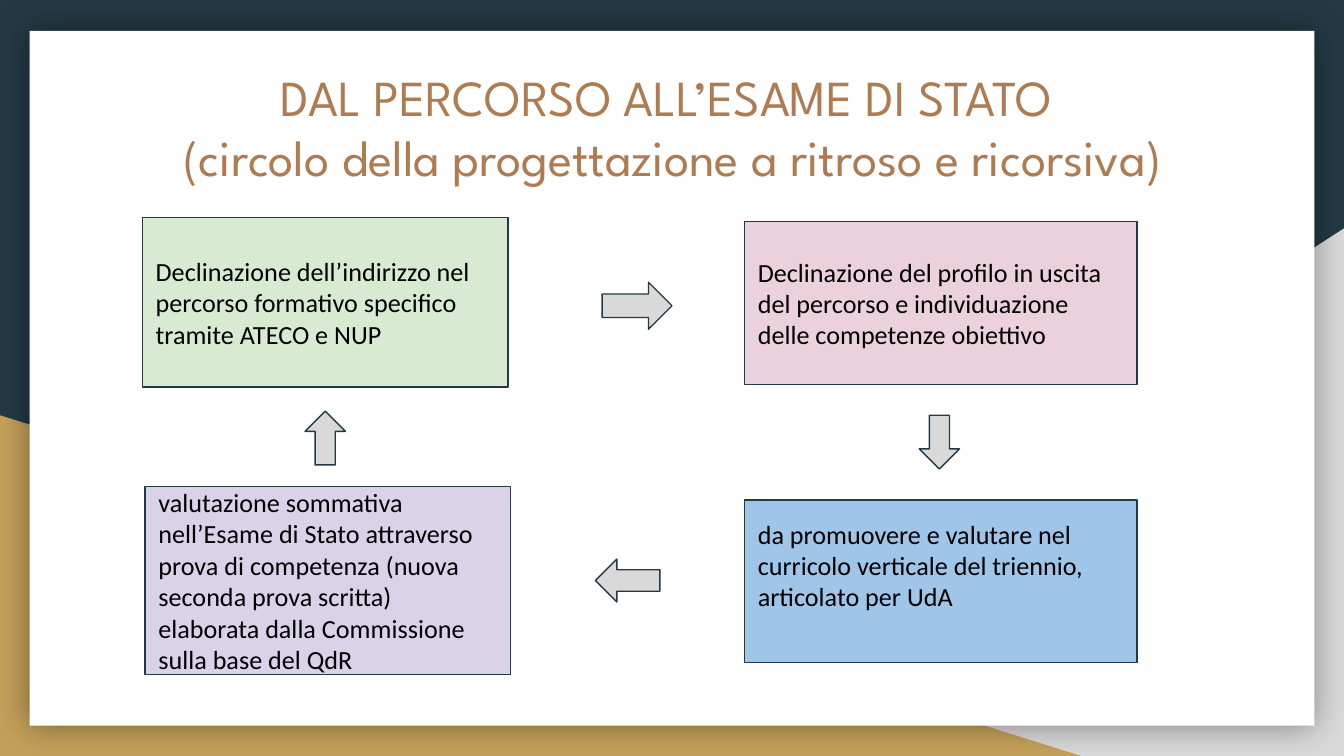
from lxml import etree
from pptx import Presentation
from pptx.dml.color import RGBColor
from pptx.enum.shapes import MSO_SHAPE
from pptx.enum.text import MSO_ANCHOR, MSO_AUTO_SIZE, PP_ALIGN
from pptx.oxml.ns import qn
from pptx.util import Inches, Pt

RECTANGLE = MSO_SHAPE.RECTANGLE
TRIANGLE = MSO_SHAPE.RIGHT_TRIANGLE
TOP, MIDDLE = MSO_ANCHOR.TOP, MSO_ANCHOR.MIDDLE
LEFT, CENTER = PP_ALIGN.LEFT, PP_ALIGN.CENTER

SLIDE_WIDTH = 10
SLIDE_HEIGHT = SLIDE_WIDTH * 9 / 16
COLORS = {
    "navy": "233A44", "gray": "D9D9D9", "gold": "C4A15A", "white": "FFFFFF",
    "copper": "AF7B51", "black": "000000", "green": "D9EAD3",
    "pink": "EAD1DC", "blue": "9FC5E8", "lilac": "D9D2E9",
}
INSET = 0.1
TITLE_LINES = [
    "DAL PERCORSO ALL’ESAME DI STATO ",
    "(circolo della progettazione a ritroso e ricorsiva)",
]
# Position, fill, bottom inset, text
STEPS = [
    ((1.06, 1.62, 2.72, 1.26), "green", INSET,
     "Declinazione dell’indirizzo nel percorso formativo specifico tramite ATECO e NUP"),
    ((5.54, 1.65, 2.92, 1.21), "pink", INSET,
     "Declinazione del profilo in uscita del percorso e individuazione "
     "delle competenze obiettivo"),
    ((5.54, 3.72, 2.92, 1.21), "blue", 0.34,
     "da promuovere e valutare nel curricolo verticale del triennio, articolato per UdA"),
    ((1.08, 3.62, 2.72, 1.4), "lilac", INSET,
     "valutazione sommativa nell’Esame di Stato attraverso prova di competenza "
     "(nuova seconda prova scritta) elaborata dalla Commissione sulla base del QdR"),
]
ARROWS = [
    (MSO_SHAPE.RIGHT_ARROW, (4.48, 2.1, 0.52, 0.35)),
    (MSO_SHAPE.DOWN_ARROW, (6.84, 3.09, 0.3, 0.4)),
    (MSO_SHAPE.LEFT_ARROW, (4.43, 4.16, 0.48, 0.32)),
    (MSO_SHAPE.UP_ARROW, (2.27, 3.06, 0.3, 0.4)),
]


def color(name):
    return RGBColor.from_string(COLORS[name])


def add_filled_shape(slide, kind, position, fill, outlined=False):
    shape = slide.shapes.add_shape(kind, *map(Inches, position))
    shape.shadow.inherit = False
    shape.fill.solid()
    shape.fill.fore_color.rgb = color(fill)
    if outlined:
        shape.line.color.rgb = color("navy")
        shape.line.width = Pt(0.75)
    else:
        shape.line.fill.background()
    return shape


def add_glow_shadow(shape):
    """Give the shape a soft shadow that spreads evenly on all sides."""
    effects = shape._element.spPr.find(qn("a:effectLst"))
    shadow = etree.SubElement(effects, qn("a:outerShdw"), blurRad=str(Pt(18)),
                              dist="0", dir="0", algn="ctr", rotWithShape="0")
    shade = etree.SubElement(shadow, qn("a:srgbClr"), val=COLORS["black"])
    etree.SubElement(shade, qn("a:alpha"), val="40000")


def write_text(shape, lines, font, size, font_color, alignment, anchor, bottom=INSET):
    frame = shape.text_frame
    frame.word_wrap = True
    frame.auto_size = MSO_AUTO_SIZE.NONE
    frame.vertical_anchor = anchor
    frame.margin_left = frame.margin_right = frame.margin_top = Inches(INSET)
    frame.margin_bottom = Inches(bottom)
    for index, line in enumerate(lines):
        paragraph = frame.add_paragraph() if index else frame.paragraphs[0]
        paragraph.alignment = alignment
        run = paragraph.add_run()
        run.text = line
        run.font.name = font
        run.font.size = Pt(size)
        run.font.color.rgb = color(font_color)


def add_backdrop(slide):
    slide.background.fill.solid()
    slide.background.fill.fore_color.rgb = color("navy")
    gray_corner = add_filled_shape(slide, TRIANGLE, (3.92, 1.7, 6.08, 3.93), "gray")
    gray_corner._element.spPr.xfrm.set("flipH", "1")
    add_filled_shape(slide, TRIANGLE, (0, 3.09, 8.06, 2.54), "gold")
    panel = add_filled_shape(slide, RECTANGLE, (0.22, 0.23, 9.56, 5.17), "white")
    add_glow_shadow(panel)


def place_title(slide):
    """Format the title and bring it in front of the backdrop."""
    title = slide.shapes.title
    title.left, title.top, title.width, title.height = map(Inches, (0.9, 0.39, 8.21, 1.02))
    write_text(title, TITLE_LINES, "League Spartan", 27, "copper", CENTER, TOP)
    slide.shapes._spTree.append(title._element)


def add_step(slide, position, fill, bottom, text):
    box = add_filled_shape(slide, RECTANGLE, position, fill, outlined=True)
    write_text(box, [text], "Calibri", 14, "black", LEFT, MIDDLE, bottom)


def main():
    presentation = Presentation()
    presentation.slide_width = Inches(SLIDE_WIDTH)
    presentation.slide_height = Inches(SLIDE_HEIGHT)
    slide = presentation.slides.add_slide(presentation.slide_layouts[5])
    add_backdrop(slide)
    place_title(slide)
    for step in STEPS:
        add_step(slide, *step)
    for kind, position in ARROWS:
        add_filled_shape(slide, kind, position, "gray", outlined=True)
    presentation.save("out.pptx")


if __name__ == "__main__":
    main()
